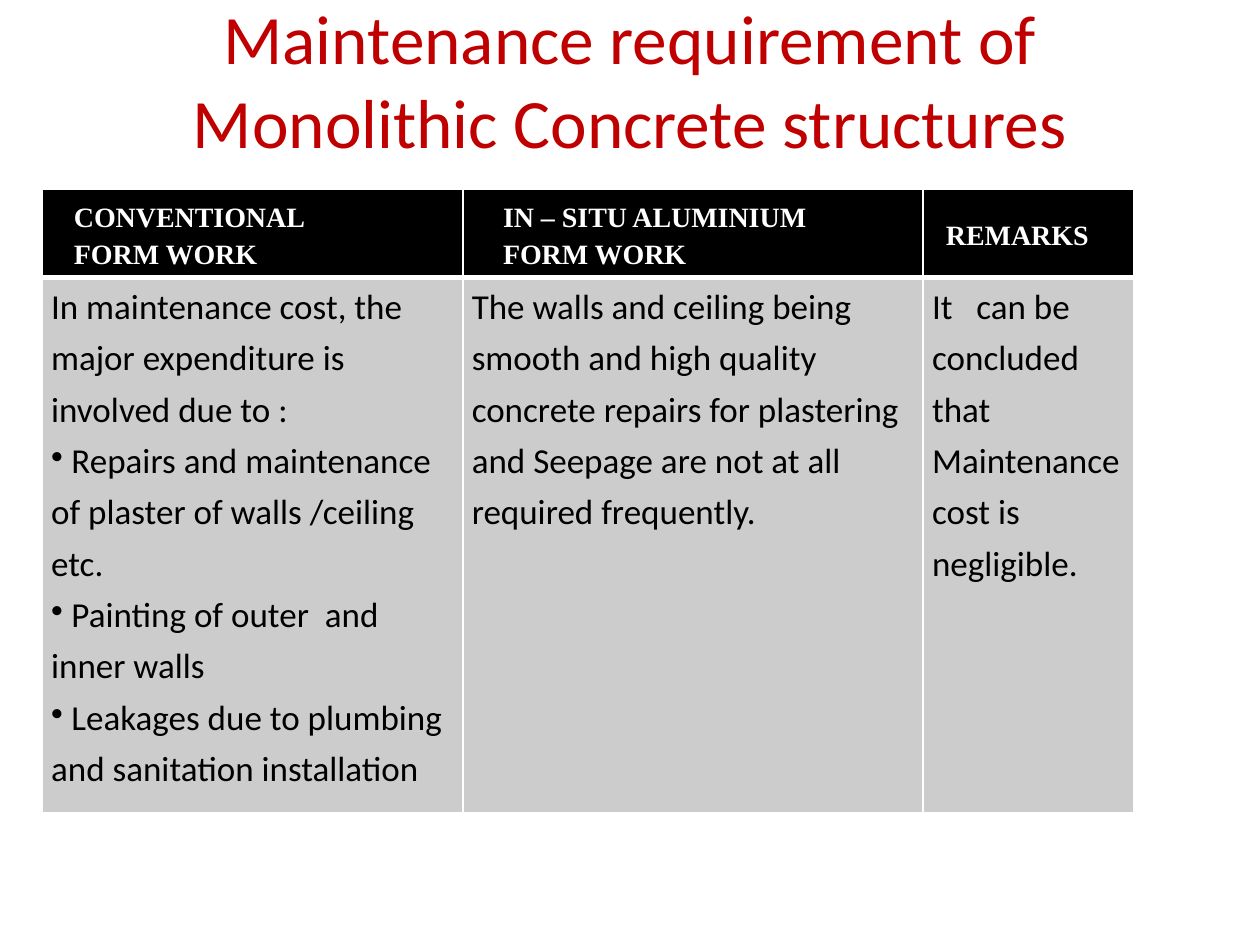
"""Build the slide on maintenance of monolithic concrete structures."""
from dataclasses import dataclass

from lxml import etree
from pptx import Presentation
from pptx import util as u
from pptx.dml.color import RGBColor
from pptx.enum import text
from pptx.oxml import ns


@dataclass(frozen=True)
class Theme:
    """Colours, fonts and type sizes of the slide."""
    title_color: str = "C00000"
    header_fill: str = "000000"
    header_color: str = "FFFFFF"
    body_fill: str = "CCCCCC"
    body_color: str = "000000"
    border: str = "FFFFFF"
    body_font: str = "Calibri"
    header_font: str = "Times New Roman"
    title_size: float = 39.6
    header_size: float = 16
    body_size: float = 20
    line_spacing: float = 1.2


BULLET = "•"
HEADERS = [
    ("CONVENTIONAL\vFORM WORK", 0.64),
    ("IN – SITU ALUMINIUM\vFORM WORK", 0.81),
    ("REMARKS", 0.46),
]
BODY = [
    [
        "In maintenance cost, the major expenditure is involved due to :",
        "• Repairs and maintenance of plaster of walls /ceiling etc.",
        "• Painting of outer  and  inner walls",
        "• Leakages due to plumbing and sanitation installation",
    ],
    ["The walls and ceiling being smooth and high quality concrete repairs "
     "for plastering and Seepage are not at all required frequently."],
    ["It   can be concluded that", "Maintenance cost is negligible."],
]
BODY_INDENT = 0.18


def apply(target, values):
    """Set each named attribute on the target."""
    for name, value in values.items():
        setattr(target, name, value)


class SlideBuilder:
    """Hold the theme and current slide, and add elements to it."""

    def __init__(self, theme, slide):
        self.theme = theme
        self.slide = slide

    def format_font(self, font, name, size, color, bold=False):
        """Apply a typeface, size, colour and weight."""
        apply(font, {"name": name, "size": u.Pt(size), "bold": bold})
        font.color.rgb = RGBColor.from_string(color)

    def title(self, wording, left, top, width, height):
        """Place and style the title placeholder."""
        shape = self.slide.shapes.title
        apply(shape, {"left": u.Cm(left), "top": u.Cm(top),
                      "width": u.Cm(width), "height": u.Cm(height)})
        frame = shape.text_frame
        frame.text = wording
        apply(frame, {"word_wrap": True,
                      "auto_size": text.MSO_AUTO_SIZE.NONE,
                      "vertical_anchor": text.MSO_ANCHOR.MIDDLE,
                      "margin_bottom": u.Cm(1.65)})
        paragraph = frame.paragraphs[0]
        paragraph.alignment = text.PP_ALIGN.CENTER
        self.format_font(paragraph.runs[0].font, self.theme.body_font,
                         self.theme.title_size, self.theme.title_color)

    def table(self, left, top, widths, heights):
        """Add an empty table with the given column widths and row heights."""
        table = self.slide.shapes.add_table(
            len(heights), len(widths), u.Cm(left), u.Cm(top),
            u.Cm(sum(widths)), u.Cm(sum(heights))).table
        for column, width in zip(table.columns, widths):
            column.width = u.Cm(width)
        for row, height in zip(table.rows, heights):
            row.height = u.Cm(height)
        return table

    def borders(self, cell, widths):
        """Draw the cell's left, right, top and bottom borders."""
        properties = cell._tc.get_or_add_tcPr()
        for side, width in zip("LRTB", widths):
            line = etree.SubElement(properties, ns.qn(f"a:ln{side}"),
                                    w=str(u.Pt(width)))
            fill = etree.SubElement(line, ns.qn("a:solidFill"))
            etree.SubElement(fill, ns.qn("a:srgbClr"), val=self.theme.border)

    def cell(self, cell, lines, indent, fill, font, border_widths, anchor):
        """Fill a cell with paragraphs, bulleting those marked so."""
        self.borders(cell, border_widths)
        cell.fill.solid()
        cell.fill.fore_color.rgb = RGBColor.from_string(fill)
        apply(cell, {"margin_left": 0, "margin_right": 0, "margin_top": 0,
                     "margin_bottom": 0, "vertical_anchor": anchor})
        frame = cell.text_frame
        frame.text = "\n".join(line.removeprefix(BULLET) for line in lines)
        for paragraph, line in zip(frame.paragraphs, lines):
            paragraph.line_spacing = self.theme.line_spacing
            properties = paragraph._p.get_or_add_pPr()
            properties.set("marL", str(u.Cm(indent)))
            properties.set("indent", "0")
            if line.startswith(BULLET):
                etree.SubElement(properties, ns.qn("a:buChar"), char=BULLET)
            for run in paragraph.runs:
                self.format_font(run.font, *font)


def main():
    """Create the presentation and save it."""
    theme = Theme()
    presentation = Presentation()
    apply(presentation, {"slide_width": u.Cm(25.4),
                         "slide_height": u.Cm(19.05)})
    slide = presentation.slides.add_slide(presentation.slide_layouts[5])
    builder = SlideBuilder(theme, slide)
    builder.title("Maintenance requirement of Monolithic Concrete structures",
                  1.27, 0.76, 22.86, 3.18)
    table = builder.table(0.85, 3.81, [8.48, 9.28, 4.24], [1.78, 10.8])
    header_font = (theme.header_font, theme.header_size,
                   theme.header_color, True)
    body_font = (theme.body_font, theme.body_size, theme.body_color)
    for column, ((header, indent), lines) in enumerate(zip(HEADERS, BODY)):
        builder.cell(table.cell(0, column), [header], indent,
                     theme.header_fill, header_font, (1, 1, 1, 3),
                     text.MSO_ANCHOR.MIDDLE)
        builder.cell(table.cell(1, column), lines, BODY_INDENT,
                     theme.body_fill, body_font, (1, 1, 3, 1),
                     text.MSO_ANCHOR.TOP)
    presentation.save("out.pptx")


if __name__ == "__main__":
    main()
